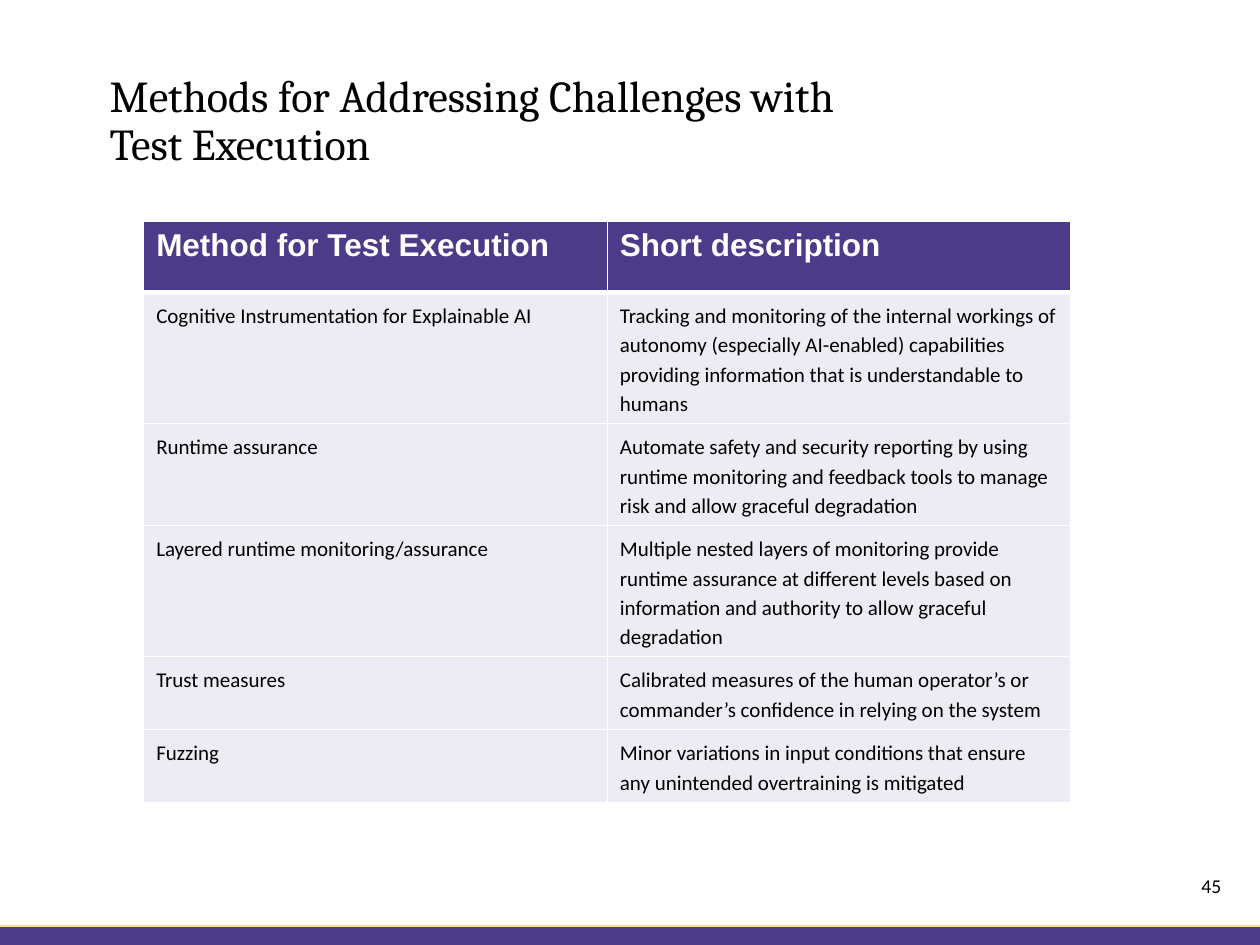
from lxml import etree
from pptx import Presentation
from pptx import util as u
from pptx.dml.color import RGBColor
from pptx.enum import shapes, text
from pptx.oxml.ns import qn

PURPLE, GOLD, LAVENDER = "4C3B89", "FFDF7F", "EDEBF3"
WHITE, BLACK = "FFFFFF", "000000"
Inches = u.Inches


def color(value):
    return RGBColor.from_string(value)


def style(para, font_name, size, ink, bold=False):
    font = para.font
    font.name, font.size, font.bold = font_name, u.Pt(size), bold
    font.color.rgb = color(ink)


deck = Presentation()
deck.slide_width, deck.slide_height = Inches(10), Inches(7.5)
page = deck.slides.add_slide(deck.slide_layouts[5])

# Footer band with its gold edge
band = page.shapes.add_shape(
    shapes.MSO_SHAPE.RECTANGLE, 0, Inches(7.35), Inches(10), Inches(0.15))
band.shadow.inherit = False
band.fill.solid()
band.fill.fore_color.rgb = color(PURPLE)
band.line.fill.background()
edge = page.shapes.add_connector(
    shapes.MSO_CONNECTOR.STRAIGHT, 0, Inches(7.35), Inches(10), Inches(7.35))
edge.line.color.rgb = color(GOLD)
edge.line.width = u.Pt(1)
etree.SubElement(edge._element.spPr, qn("a:effectLst"))

# Title
title = page.shapes.title
title.left, title.top = Inches(0.77), Inches(0.54)
title.width, title.height = Inches(7.33), Inches(0.59)
frame = title.text_frame
frame.word_wrap = True
frame.auto_size = text.MSO_AUTO_SIZE.NONE
frame.vertical_anchor = text.MSO_ANCHOR.TOP
frame.text = "Methods for Addressing Challenges with\vTest Execution"
para = frame.paragraphs[0]
para.alignment = text.PP_ALIGN.LEFT
para.line_spacing = 0.9
style(para, "Cambria", 25.2, BLACK)

# Page number
box = page.shapes.add_textbox(Inches(7.54), Inches(6.89), Inches(2.25), Inches(0.4))
box.text_frame.word_wrap = True
para = box.text_frame.paragraphs[0]
para.text = "45"
para.alignment = text.PP_ALIGN.RIGHT
style(para, "Calibri", 11.2, BLACK)

# Methods table
rows = [
    ("Method for Test Execution", "Short description"),
    ("Cognitive Instrumentation for Explainable AI",
     "Tracking and monitoring of the internal workings of autonomy (especially "
     "AI-enabled) capabilities providing information that is understandable to humans"),
    ("Runtime assurance",
     "Automate safety and security reporting by using runtime monitoring and "
     "feedback tools to manage risk and allow graceful degradation"),
    ("Layered runtime monitoring/assurance",
     "Multiple nested layers of monitoring provide runtime assurance at different "
     "levels based on information and authority to allow graceful degradation"),
    ("Trust measures",
     "Calibrated measures of the human operator’s or commander’s confidence in "
     "relying on the system"),
    ("Fuzzing",
     "Minor variations in input conditions that ensure any unintended overtraining "
     "is mitigated"),
]
row_height = Inches(0.56)
table = page.shapes.add_table(
    len(rows), 2, Inches(1.14), Inches(1.76), Inches(7.36), row_height * len(rows)).table
table.horz_banding = False
for column in table.columns:
    column.width = Inches(3.68)

for row_index, words in enumerate(rows):
    header = row_index == 0
    table.rows[row_index].height = row_height
    for column_index, wording in enumerate(words):
        cell = table.cell(row_index, column_index)
        cell.text = wording
        para = cell.text_frame.paragraphs[0]
        if header:
            style(para, "Arial", 18, WHITE, bold=True)
        else:
            cell.margin_top = cell.margin_bottom = Inches(0.06)
            para.line_spacing = 1.15
            para.space_after = u.Pt(10)
            style(para, "Calibri", 12, BLACK)

        properties = cell._tc.get_or_add_tcPr()
        for side in ("L", "R", "T", "B"):
            thick = (header and side == "B") or (row_index == 1 and side == "T")
            border = etree.SubElement(
                properties, qn(f"a:ln{side}"), w=str(u.Pt(3 if thick else 1)))
            fill = etree.SubElement(border, qn("a:solidFill"))
            etree.SubElement(fill, qn("a:srgbClr"), val=WHITE)
        cell.fill.solid()
        cell.fill.fore_color.rgb = color(PURPLE if header else LAVENDER)

deck.save("out.pptx")
